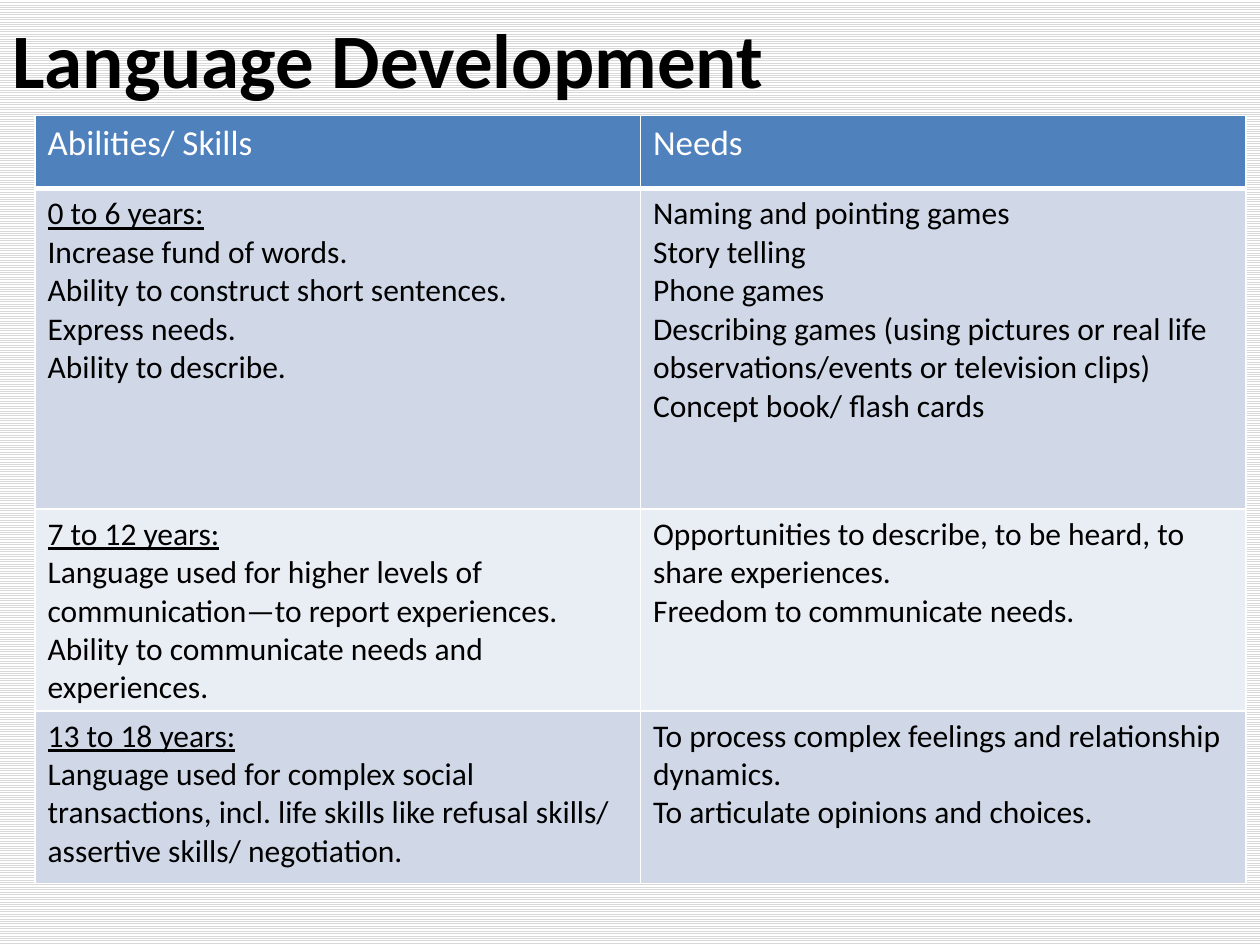
from dataclasses import dataclass

from lxml import etree
from pptx import Presentation
from pptx.dml.color import RGBColor
from pptx.enum.dml import MSO_PATTERN
from pptx.enum.text import MSO_ANCHOR
from pptx.oxml.ns import qn
from pptx.util import Pt

LIGHT_HORIZONTAL = MSO_PATTERN.LIGHT_HORIZONTAL
MIDDLE = MSO_ANCHOR.MIDDLE

FONT = "Calibri"
COLORS = {
    "black": "000000",
    "white": "FFFFFF",
    "stripe": "D9D9D9",
    "header": "4F81BD",
    "band_dark": "D0D8E8",
    "band_light": "E9EDF4",
}
COLUMN_WIDTH = 346


@dataclass
class Row:
    height: float
    fill: str
    abilities: list[str]
    needs: list[str]
    age: str = ""
    size: int = 18
    color: str = "black"
    bottom_line: int = 1


ROWS = [
    Row(41.8, "header", ["Abilities/ Skills"], ["Needs"],
        size=20, color="white", bottom_line=3),
    Row(183, "band_dark",
        ["Increase fund of words.",
         "Ability to construct short sentences.",
         "Express needs.",
         "Ability to describe."],
        ["Naming and pointing games",
         "Story telling",
         "Phone games",
         "Describing games (using pictures or real life "
         "observations/events or television clips)",
         "Concept book/ flash cards"],
        age="0 to 6 years:"),
    Row(115.4, "band_light",
        ["Language used for higher levels of communication—to report experiences.",
         "Ability to communicate needs and experiences."],
        ["Opportunities to describe, to be heard, to share experiences.",
         "Freedom to communicate needs."],
        age="7 to 12 years:"),
    Row(98.6, "band_dark",
        ["Language used for complex social transactions, incl. life skills "
         "like refusal skills/ assertive skills/ negotiation."],
        ["To process complex feelings and relationship dynamics.",
         "To articulate opinions and choices."],
        age="13 to 18 years:"),
]


def rgb(name: str) -> RGBColor:
    return RGBColor.from_string(COLORS[name])


def add_run(p, text: str, size: int, color: str,
            bold: bool = False, underline: bool = False) -> None:
    r = p.add_run()
    r.text = text
    r.font.name = FONT
    r.font.size = Pt(size)
    r.font.bold = bold
    r.font.underline = underline
    r.font.color.rgb = rgb(color)


def set_borders(cell, bottom_line: int) -> None:
    """Put white lines on all four sides; they must come before the fill."""
    tc_pr = cell._tc.get_or_add_tcPr()
    for i, side in enumerate(("lnL", "lnR", "lnT", "lnB")):
        width = bottom_line if side == "lnB" else 1
        ln = etree.Element(qn(f"a:{side}"), w=str(Pt(width)))
        fill = etree.SubElement(ln, qn("a:solidFill"))
        etree.SubElement(fill, qn("a:srgbClr"), val=COLORS["white"])
        tc_pr.insert(i, ln)


def fill_cell(cell, row: Row, lines: list[str], age: str = "") -> None:
    cell.fill.solid()
    cell.fill.fore_color.rgb = rgb(row.fill)
    set_borders(cell, row.bottom_line)
    tf = cell.text_frame
    for i, line in enumerate([age, *lines] if age else lines):
        p = tf.add_paragraph() if i else tf.paragraphs[0]
        add_run(p, line, row.size, row.color, underline=bool(age) and i == 0)


def add_title(s, text: str) -> None:
    tf = s.shapes.add_textbox(Pt(0), Pt(0), Pt(648), Pt(66)).text_frame
    tf.word_wrap = True
    tf.vertical_anchor = MIDDLE
    add_run(tf.paragraphs[0], text, 44, "black", bold=True)


def add_skills_table(s, rows: list[Row]) -> None:
    height = sum(row.height for row in rows)
    table = s.shapes.add_table(len(rows), 2, Pt(20), Pt(66),
                               Pt(2 * COLUMN_WIDTH), Pt(height)).table
    table.first_row = table.horz_banding = False
    for column in table.columns:
        column.width = Pt(COLUMN_WIDTH)
    for i, row in enumerate(rows):
        table.rows[i].height = Pt(row.height)
        fill_cell(table.cell(i, 0), row, row.abilities, row.age)
        fill_cell(table.cell(i, 1), row, row.needs)


def main() -> None:
    prs = Presentation()
    prs.slide_width, prs.slide_height = Pt(720), Pt(540)
    s = prs.slides.add_slide(prs.slide_layouts[6])
    background = s.background.fill
    background.patterned()
    background.pattern = LIGHT_HORIZONTAL
    background.fore_color.rgb = rgb("stripe")
    background.back_color.rgb = rgb("white")
    add_title(s, "Language Development")
    add_skills_table(s, ROWS)
    prs.save("out.pptx")


if __name__ == "__main__":
    main()
